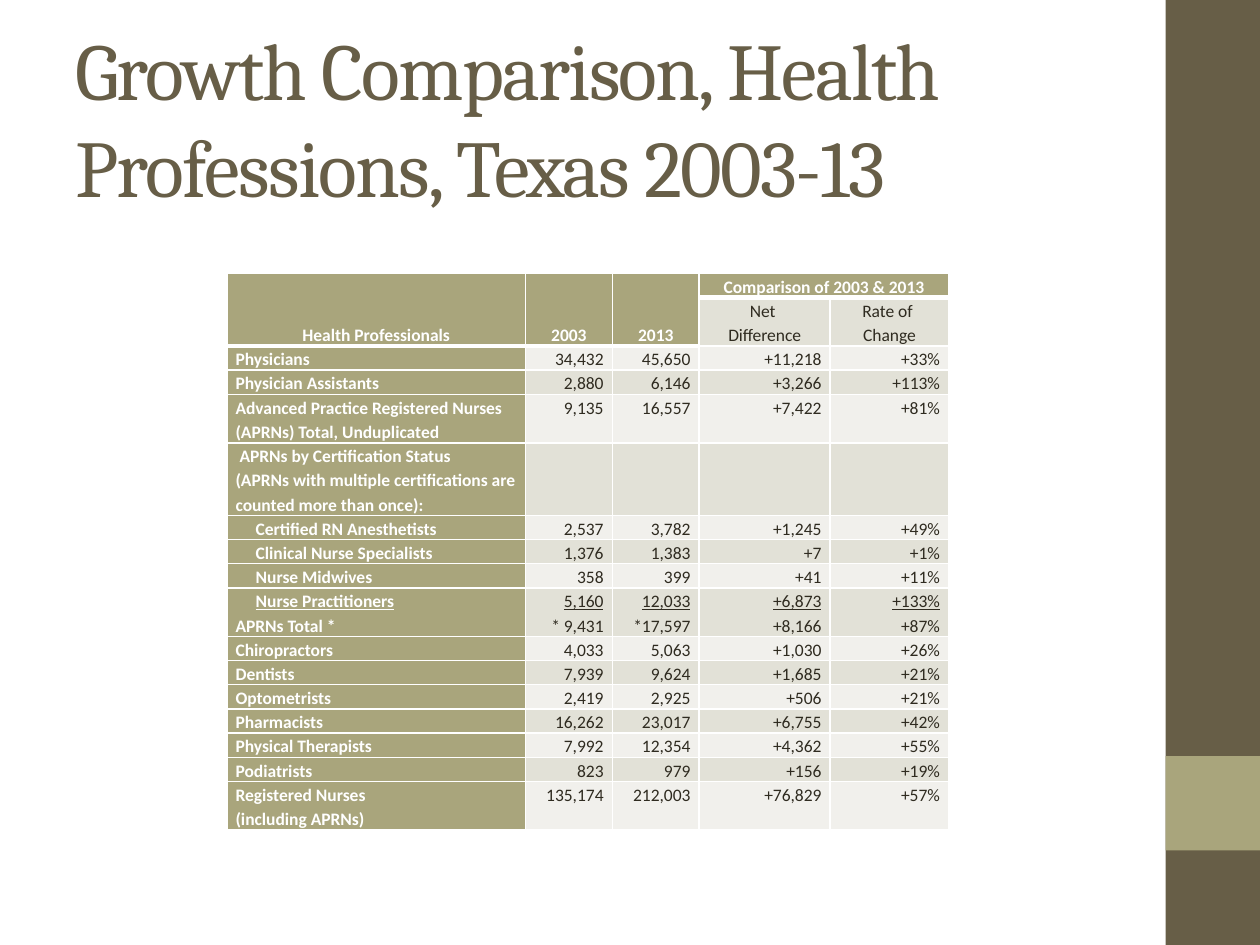
from dataclasses import dataclass

from lxml import etree
from pptx import Presentation
from pptx import util as u
from pptx.dml.color import RGBColor
from pptx.enum import shapes, text
from pptx.oxml.ns import qn

COLORS = {
    "brown": "675E47",
    "olive": "A9A57C",
    "light": "F1F0EC",
    "band": "E2E1D7",
    "dark": "2F2B20",
    "white": "FFFFFF",
}
LINE_HEIGHT = 0.19
COLUMN_WIDTHS = [2.37, 0.69, 0.69, 1.04, 0.94]
CENTER, LEFT, RIGHT = text.PP_ALIGN.CENTER, text.PP_ALIGN.LEFT, text.PP_ALIGN.RIGHT


@dataclass
class Profession:
    label: str
    values: tuple = ("", "", "", "")
    lines: int = 1
    indent: float = 0
    underline: bool = False


@dataclass
class CellStyle:
    fill: str
    color: str
    bold: bool
    align: text.PP_ALIGN
    top: float = 1
    bottom: float = 1
    anchor: text.MSO_ANCHOR = text.MSO_ANCHOR.TOP


PROFESSIONS = [
    Profession("Physicians", ("34,432", "45,650", "+11,218", "+33%")),
    Profession("Physician Assistants", ("2,880", "6,146", "+3,266", "+113%")),
    Profession("Advanced Practice Registered Nurses (APRNs) Total, Unduplicated",
               ("9,135", "16,557", "+7,422", "+81%"), lines=2),
    Profession(" APRNs by Certification Status\n"
               "(APRNs with multiple certifications are counted more than once):", lines=3),
    Profession("Certified RN Anesthetists", ("2,537", "3,782", "+1,245", "+49%"), indent=0.16),
    Profession("Clinical Nurse Specialists", ("1,376", "1,383", "+7", "+1%"), indent=0.16),
    Profession("Nurse Midwives", ("358", "399", "+41", "+11%"), indent=0.16),
    Profession("Nurse Practitioners\nAPRNs Total *",
               ("5,160\n* 9,431", "12,033\n*17,597", "+6,873\n+8,166", "+133%\n+87%"),
               lines=2, indent=0.16, underline=True),
    Profession("Chiropractors", ("4,033", "5,063", "+1,030", "+26%")),
    Profession("Dentists", ("7,939", "9,624", "+1,685", "+21%")),
    Profession("Optometrists", ("2,419", "2,925", "+506", "+21%")),
    Profession("Pharmacists", ("16,262", "23,017", "+6,755", "+42%")),
    Profession("Physical Therapists", ("7,992", "12,354", "+4,362", "+55%")),
    Profession("Podiatrists", ("823", "979", "+156", "+19%")),
    Profession("Registered Nurses\n(including APRNs)",
               ("135,174", "212,003", "+76,829", "+57%"), lines=2),
]


def rgb(name: str) -> RGBColor:
    return RGBColor.from_string(COLORS[name])


def add_bar(slide, top: float, height: float, color: str) -> None:
    bar = slide.shapes.add_shape(shapes.MSO_SHAPE.RECTANGLE, u.Inches(9.25),
                                 u.Inches(top), u.Inches(0.75), u.Inches(height))
    bar.shadow.inherit = False
    bar.fill.solid()
    bar.fill.fore_color.rgb = rgb(color)
    bar.line.fill.background()


def add_title(slide, wording: str) -> None:
    box = slide.shapes.add_textbox(u.Inches(0.5), u.Inches(0.3), u.Inches(8.33), u.Inches(1.25))
    frame = box.text_frame
    frame.word_wrap = True
    frame.vertical_anchor = text.MSO_ANCHOR.MIDDLE
    frame.text = wording
    run = frame.paragraphs[0].runs[0]
    run.font.name, run.font.size = "Cambria", u.Pt(46)
    run.font.color.rgb = rgb("brown")
    run.font._element.set("spc", "-100")


def set_borders(cell, top: float, bottom: float) -> None:
    properties = cell._tc.get_or_add_tcPr()
    sides = [("a:lnL", 1), ("a:lnR", 1), ("a:lnT", top), ("a:lnB", bottom)]
    for position, (tag, points) in enumerate(sides):
        line = etree.Element(qn(tag), w=str(u.Pt(points)))
        fill = etree.SubElement(line, qn("a:solidFill"))
        etree.SubElement(fill, qn("a:srgbClr"), val=COLORS["white"])
        properties.insert(position, line)


def fill_cell(cell, wording: str, style: CellStyle, indent: float = 0,
              underline: bool = False) -> None:
    cell.text_frame.text = wording
    cell.margin_left = cell.margin_right = u.Inches(0.07)
    cell.margin_top = cell.margin_bottom = 0
    cell.vertical_anchor = style.anchor
    cell.fill.solid()
    cell.fill.fore_color.rgb = rgb(style.fill)
    set_borders(cell, style.top, style.bottom)
    for number, paragraph in enumerate(cell.text_frame.paragraphs):
        paragraph.alignment = style.align
        paragraph.line_spacing = 1.15
        # Indent and underline belong to the first paragraph only
        if number == 0 and indent:
            paragraph._p.get_or_add_pPr().set("marL", str(u.Inches(indent)))
        for run in paragraph.runs:
            run.font.name, run.font.size = "Calibri", u.Pt(10)
            run.font.bold = style.bold
            run.font.underline = underline and number == 0
            run.font.color.rgb = rgb(style.color)


def fill_header(table) -> None:
    heading = CellStyle("olive", "white", True, CENTER, bottom=3,
                        anchor=text.MSO_ANCHOR.BOTTOM)
    group = CellStyle("olive", "white", True, CENTER, bottom=3)
    subheading = CellStyle("band", "dark", False, CENTER, top=3)
    for column, label in enumerate(["Health Professionals", "2003", "2013"]):
        fill_cell(table.cell(0, column), label, heading)
        fill_cell(table.cell(1, column), "", heading)
        table.cell(0, column).merge(table.cell(1, column))
    fill_cell(table.cell(0, 3), "Comparison of 2003 & 2013", group)
    fill_cell(table.cell(0, 4), "", group)
    table.cell(0, 3).merge(table.cell(0, 4))
    for column, label in enumerate(["Net \vDifference", "Rate of \vChange"], start=3):
        fill_cell(table.cell(1, column), label, subheading)


def add_growth_table(slide) -> None:
    row_lines = [1, 2] + [profession.lines for profession in PROFESSIONS]
    frame = slide.shapes.add_table(len(row_lines), len(COLUMN_WIDTHS), u.Inches(1.8),
                                   u.Inches(2.17), u.Inches(sum(COLUMN_WIDTHS)),
                                   u.Inches(LINE_HEIGHT * sum(row_lines)))
    table = frame.table
    for column, width in zip(table.columns, COLUMN_WIDTHS):
        column.width = u.Inches(width)
    for row, lines in zip(table.rows, row_lines):
        row.height = u.Inches(LINE_HEIGHT * lines)
    fill_header(table)
    for index, profession in enumerate(PROFESSIONS):
        row = index + 2
        band = "band" if index % 2 else "light"
        for column, wording in enumerate((profession.label, *profession.values)):
            top = 3 if index == 0 and column < 3 else 1
            if column == 0:
                style = CellStyle("olive", "white", True, LEFT, top)
            else:
                style = CellStyle(band, "dark", False, RIGHT, top)
            fill_cell(table.cell(row, column), wording, style,
                      profession.indent if column == 0 else 0, profession.underline)


def main() -> None:
    presentation = Presentation()
    presentation.slide_width, presentation.slide_height = u.Inches(10), u.Inches(7.5)
    slide = presentation.slides.add_slide(presentation.slide_layouts[6])
    # Side bar with accent block
    add_bar(slide, 0, 7.5, "brown")
    add_bar(slide, 6, 0.75, "olive")
    # Title and table
    add_title(slide, "Growth Comparison, Health Professions, Texas 2003-13")
    add_growth_table(slide)
    presentation.save("out.pptx")


if __name__ == "__main__":
    main()
